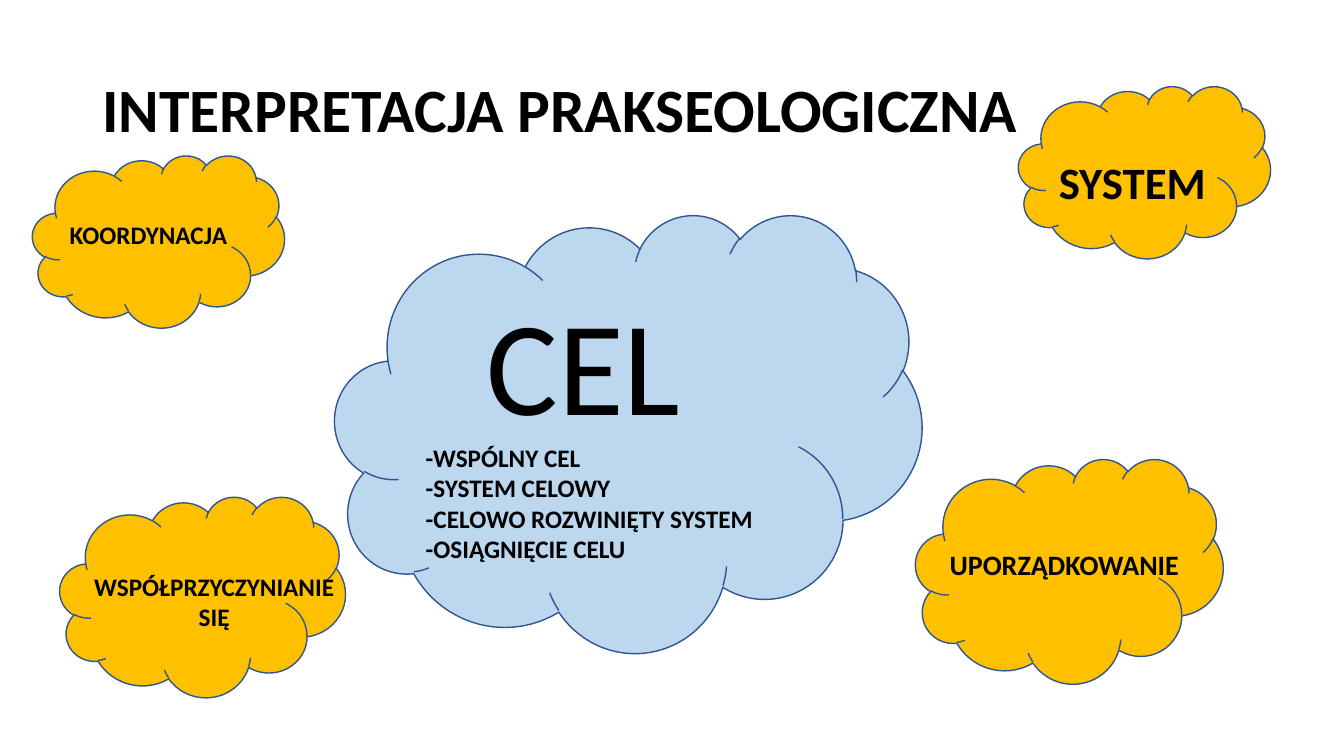
import pptx
import pptx.dml.color
import pptx.enum.shapes
import pptx.enum.text
import pptx.util
from dataclasses import dataclass

PX = 9525
ALIGN = pptx.enum.text.PP_ALIGN
ANCHOR = pptx.enum.text.MSO_ANCHOR


@dataclass(frozen=True)
class Theme:
    """Colours, font and type sizes of the slide."""
    font: str = "Calibri"
    ink: str = "000000"
    edge: str = "325491"
    blue: str = "BDD7EE"
    gold: str = "FFC000"
    title: int = 44
    goal: int = 96
    large: int = 32
    label: int = 20
    body: int = 18


THEME = Theme()


def scale(box):
    """Turn px lengths into EMU."""
    return [pptx.util.Emu(n * PX) for n in box]


def tint(code):
    """Return the colour for a hex code."""
    return pptx.dml.color.RGBColor.from_string(code)


def cloud(slide, box, fill):
    """Draw a cloud with a thin edge."""
    kind = pptx.enum.shapes.MSO_SHAPE.CLOUD
    shape = slide.shapes.add_shape(kind, *scale(box))
    shape.shadow.inherit = False
    shape.fill.solid()
    shape.fill.fore_color.rgb = tint(fill)
    shape.line.color.rgb = tint(THEME.edge)
    shape.line.width = pptx.util.Pt(1)


def frame(slide, box, anchor=ANCHOR.TOP):
    """Add an empty wrapped text box and return its text frame."""
    area = slide.shapes.add_textbox(*scale(box)).text_frame
    area.word_wrap = True
    area.vertical_anchor = anchor
    return area


def write(para, text, size=THEME.body, bold=True, align=ALIGN.LEFT, space=1.0, indent=0):
    """Put formatted text into a paragraph."""
    para.alignment = align
    para.line_spacing = space
    if indent:
        para._p.get_or_add_pPr().set("indent", str(indent * PX))
    run = para.add_run()
    run.text = text
    run.font.name = THEME.font
    run.font.size = pptx.util.Pt(size)
    run.font.bold = bold
    run.font.color.rgb = tint(THEME.ink)


def label(slide, box, text, anchor=ANCHOR.TOP, **style):
    """Add a text box with one paragraph."""
    write(frame(slide, box, anchor).paragraphs[0], text, **style)


def goal(slide, box, head, lines):
    """Add the large heading with its lines beneath."""
    area = frame(slide, box)
    write(area.paragraphs[0], head, size=THEME.goal, bold=False, indent=58)
    for line in lines:
        write(area.add_paragraph(), line)


def main():
    """Build and save the slide."""
    deck = pptx.Presentation()
    deck.slide_width, deck.slide_height = scale((1280, 720))
    slide = deck.slides.add_slide(deck.slide_layouts[6])

    label(slide, (88, 38, 1104, 139), "INTERPRETACJA PRAKSEOLOGICZNA",
          anchor=ANCHOR.MIDDLE, size=THEME.title, space=0.9)

    cloud(slide, (319, 204, 559, 417), THEME.blue)
    goal(slide, (396, 263, 361, 281), "CEL", [
        "-WSPÓLNY CEL",
        "-SYSTEM CELOWY",
        "-CELOWO ROZWINIĘTY SYSTEM",
        "-OSIĄGNIĘCIE CELU",
    ])

    parts = [
        ((31, 148, 240, 164), (57, 204, 187, 38), "KOORDYNACJA", {}),
        ((872, 437, 293, 214), (895, 517, 240, 42), "UPORZĄDKOWANIE",
         {"size": THEME.label}),
        ((970, 82, 240, 164), (999, 143, 165, 61), "SYSTEM",
         {"size": THEME.large}),
        ((57, 473, 272, 191), (79, 539, 250, 68), "WSPÓŁPRZYCZYNIANIE SIĘ",
         {"align": ALIGN.CENTER}),
    ]
    for shape, box, text, style in parts:
        cloud(slide, shape, THEME.gold)
        label(slide, box, text, **style)

    deck.save("out.pptx")


if __name__ == "__main__":
    main()
